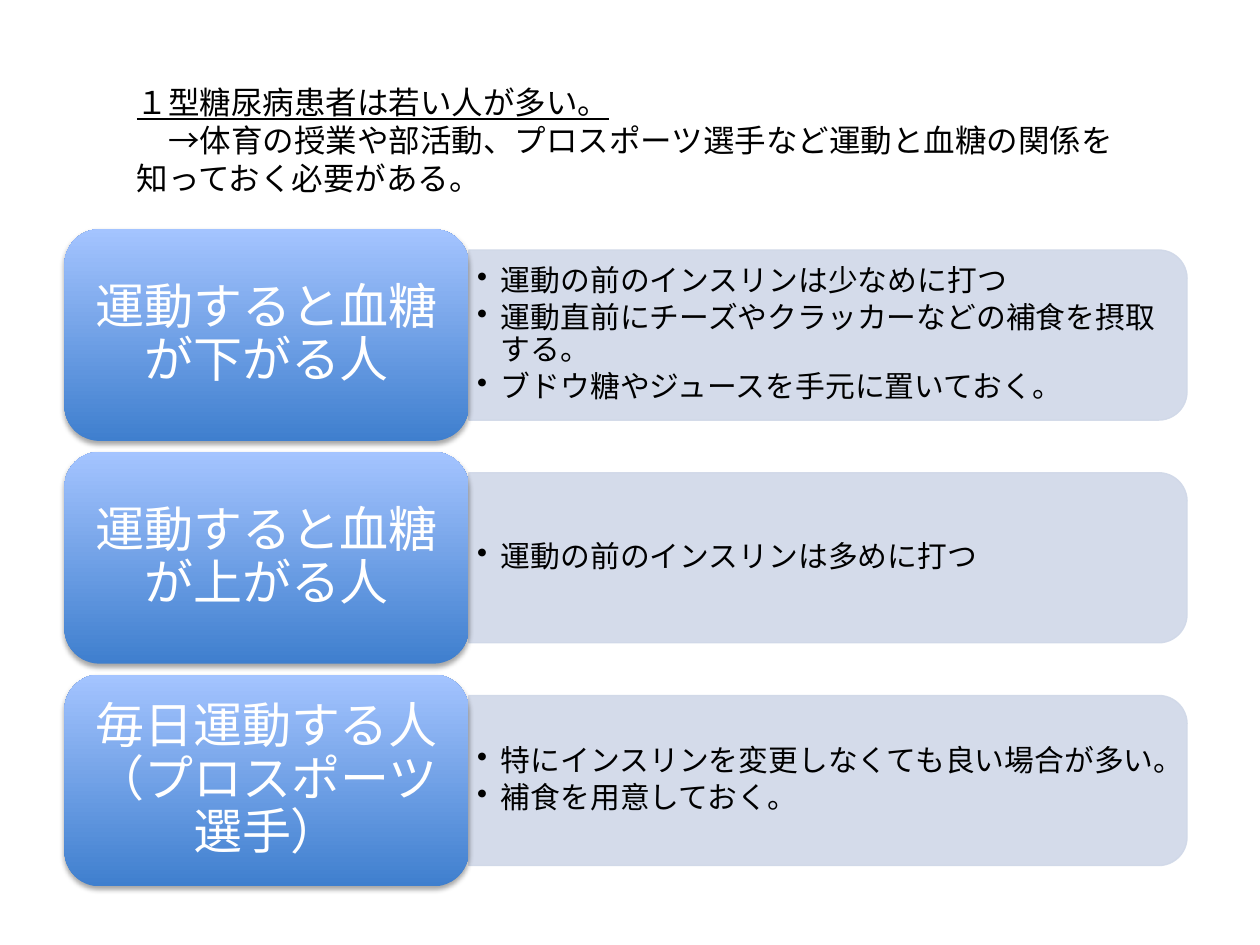
from dataclasses import dataclass
from typing import Any

from lxml import etree
from pptx import Presentation
from pptx import util as u
from pptx.dml.color import RGBColor
from pptx.enum import shapes, text
from pptx.oxml import ns

INTRO = [
    ("１型糖尿病患者は若い人が多い。", True),
    ("　→体育の授業や部活動、プロスポーツ選手など運動と血糖の関係を知っておく必要がある。", False),
]
GROUPS = [
    ("運動すると血糖が下がる人", [
        "運動の前のインスリンは少なめに打つ",
        "運動直前にチーズやクラッカーなどの補食を摂取する。",
        "ブドウ糖やジュースを手元に置いておく。",
    ]),
    ("運動すると血糖が上がる人", ["運動の前のインスリンは多めに打つ"]),
    ("毎日運動する人（プロスポーツ選手）", [
        "特にインスリンを変更しなくても良い場合が多い。",
        "補食を用意しておく。",
    ]),
]
FIRST_TOP, ROW_STEP = 4.62, 4.49
CARD_LEFT, CARD_WIDTH, CARD_HEIGHT = 1.3, 8.15, 4.27
PANEL_WIDTH, PANEL_HEIGHT = 14.48, 3.43


def rgb(value):
    return RGBColor.from_string(value)


def add_xml(parent, tag, **attributes):
    return etree.SubElement(parent, ns.qn(tag), attributes)


def write(paragraph, words, size=18, color="000000", font="Calibri", underline=False,
          align=None, spacing=None, after=None, bullet=None):
    run = paragraph.add_run()
    run.text = words
    run.font.size = u.Pt(size)
    run.font.name = font
    run.font.color.rgb = rgb(color)
    run.font.underline = underline
    paragraph.alignment = align
    paragraph.line_spacing = spacing
    properties = paragraph._p.get_or_add_pPr()
    if after:
        add_xml(add_xml(properties, "a:spcAft"), "a:spcPct", val=str(after * 1000))
    if bullet:
        paragraph.level = 1
        indent = u.Cm(0.48)
        properties.set("marL", str(indent))
        properties.set("indent", str(-indent))
        add_xml(properties, "a:buChar", char=bullet)


@dataclass
class Deck:
    slide: Any
    panel_color: str = "D0D8E8"
    card_bottom: str = "3F7FCE"
    card_top: str = "A4C4FF"

    def frame(self, shape, side, edge):
        frame = shape.text_frame
        frame.word_wrap = True
        frame.vertical_anchor = text.MSO_ANCHOR.MIDDLE
        frame.margin_left = frame.margin_right = u.Cm(side)
        frame.margin_top = frame.margin_bottom = u.Cm(edge)
        return frame

    def paragraphs(self, frame, count):
        return [frame.paragraphs[0]] + [frame.add_paragraph() for _ in range(count - 1)]

    def intro(self, lines):
        box = self.slide.shapes.add_textbox(u.Cm(2.51), u.Cm(1.55), u.Cm(20.32), u.Cm(2.57))
        frame = box.text_frame
        frame.word_wrap = True
        frame.auto_size = text.MSO_AUTO_SIZE.SHAPE_TO_FIT_TEXT
        for paragraph, (words, underline) in zip(self.paragraphs(frame, len(lines)), lines):
            write(paragraph, words, underline=underline)

    def panel(self, middle):
        center = CARD_LEFT + CARD_WIDTH + PANEL_WIDTH / 2
        panel = self.slide.shapes.add_shape(
            shapes.MSO_SHAPE.ROUND_2_SAME_RECTANGLE,
            u.Cm(center - PANEL_HEIGHT / 2), u.Cm(middle - PANEL_WIDTH / 2),
            u.Cm(PANEL_HEIGHT), u.Cm(PANEL_WIDTH))
        panel.rotation = 90
        panel.shadow.inherit = False
        panel.line.width = u.Pt(0.75)
        for fill in (panel.fill, panel.line.fill):
            fill.solid()
            fill.fore_color.rgb = rgb(self.panel_color)
        for color in panel._element.spPr.iter(ns.qn("a:srgbClr")):
            add_xml(color, "a:alpha", val="90000")

    def advice(self, middle, items):
        height = 3.07
        box = self.slide.shapes.add_textbox(
            u.Cm(CARD_LEFT + CARD_WIDTH), u.Cm(middle - height / 2), u.Cm(14.32), u.Cm(height))
        frame = self.frame(box, 0.17, 0.09)
        for paragraph, words in zip(self.paragraphs(frame, len(items)), items):
            write(paragraph, words, size=17, spacing=0.9, after=15, bullet="•")

    def card(self, top, words):
        card = self.slide.shapes.add_shape(
            shapes.MSO_SHAPE.ROUNDED_RECTANGLE,
            u.Cm(CARD_LEFT), u.Cm(top), u.Cm(CARD_WIDTH), u.Cm(CARD_HEIGHT))
        card.fill.gradient()
        card.fill.gradient_angle = 90
        stops = zip(card.fill.gradient_stops, (self.card_bottom, self.card_top))
        for position, (stop, color) in enumerate(stops):
            stop.position = position
            stop.color.rgb = rgb(color)
        card.line.fill.background()
        card.shadow.inherit = False
        effects = card._element.spPr.find(ns.qn("a:effectLst"))
        shadow = add_xml(effects, "a:outerShdw", blurRad=str(u.Pt(3.1)), dist=str(u.Pt(1.8)),
                         dir="5400000", rotWithShape="0")
        add_xml(add_xml(shadow, "a:srgbClr", val="000000"), "a:alpha", val="35000")
        frame = self.frame(card, 0.3, 0.15)
        write(frame.paragraphs[0], words, size=28, color="FFFFFF",
              align=text.PP_ALIGN.CENTER, spacing=0.9, after=35)


def main():
    presentation = Presentation()
    presentation.slide_width, presentation.slide_height = u.Cm(25.4), u.Cm(19.05)
    deck = Deck(presentation.slides.add_slide(presentation.slide_layouts[6]))
    deck.intro(INTRO)
    for row, (patient, items) in enumerate(GROUPS):
        top = FIRST_TOP + row * ROW_STEP
        middle = top + CARD_HEIGHT / 2
        deck.panel(middle)
        deck.advice(middle, items)
        deck.card(top, patient)
    presentation.save("out.pptx")


if __name__ == "__main__":
    main()
